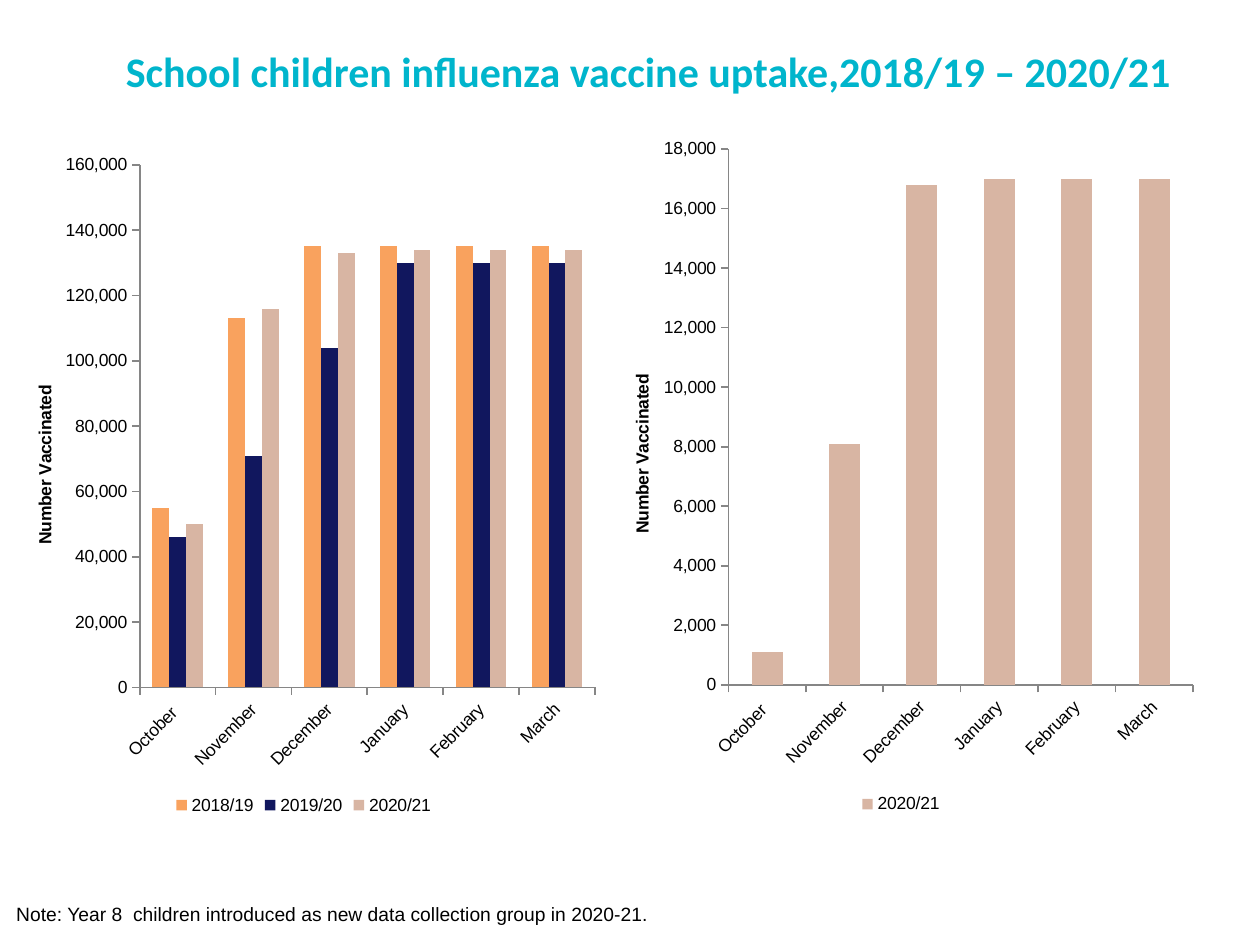
"""Build a slide comparing school influenza vaccine uptake in two column charts."""
from lxml import etree
from pptx import Presentation
from pptx import util as u
from pptx.chart.data import CategoryChartData
from pptx.dml.color import RGBColor
from pptx.enum import chart as c
from pptx.enum import text as t
from pptx.oxml import parse_xml
from pptx.oxml.ns import nsdecls, qn

TEAL = RGBColor(0x00, 0xB5, 0xCC)
ORANGE = RGBColor(0xF9, 0xA2, 0x5E)
NAVY = RGBColor(0x11, 0x17, 0x5E)
BEIGE = RGBColor(0xD8, 0xB5, 0xA3)
GREY = RGBColor(0x86, 0x86, 0x86)
BLACK = RGBColor(0, 0, 0)

MONTHS = ["October ", "November", "December", "January", "February", "March"]
CHARTS = [
    {"frame": (0, 80.6, 347, 388), "plot": (0.23, 0.035, 0.75, 0.77), "top": 160000, "step": 20000,
     "series": [("2018/19", ORANGE, (55000, 113000, 135000, 135000, 135000, 135000)),
                ("2019/20", NAVY, (46000, 71000, 104000, 130000, 130000, 130000)),
                ("2020/21", BEIGE, (50000, 116000, 133000, 134000, 134000, 134000))]},
    {"frame": (341.3, 71.3, 347, 396.7), "plot": (0.216, 0.035, 0.765, 0.772), "top": 18000, "step": 2000,
     "series": [("2020/21", BEIGE, (1100, 8100, 16800, 17000, 17000, 17000))]},
]


def write(frame, words, size=10, font="Arial", color=BLACK, bold=False, align=None):
    paragraph = frame.paragraphs[0]
    paragraph.alignment = align
    run = paragraph.add_run()
    run.text = words
    run.font.size = u.Pt(size)
    run.font.name = font
    run.font.bold = bold
    run.font.color.rgb = color


def place(element, index, target, **fractions):
    for old in element.findall(qn("c:layout")):
        element.remove(old)
    modes = "".join(f'<c:{axis}Mode val="edge"/>' for axis in "xy")
    sizes = "".join(f'<c:{key} val="{value}"/>' for key, value in fractions.items())
    element.insert(index, parse_xml(
        f'<c:layout {nsdecls("c")}><c:manualLayout>{target}{modes}{sizes}</c:manualLayout></c:layout>'))


presentation = Presentation()
presentation.slide_width = u.Pt(720)
presentation.slide_height = u.Pt(540)
slide = presentation.slides.add_slide(presentation.slide_layouts[5])

title = slide.shapes.title
title.left, title.top, title.width, title.height = u.Pt(52.5), u.Pt(0), u.Pt(636), u.Pt(80.6)
title.text_frame.word_wrap = False
title.text_frame.vertical_anchor = t.MSO_ANCHOR.MIDDLE
write(title.text_frame, "School children influenza vaccine uptake,2018/19 – 2020/21",
      size=24, font="Calibri", color=TEAL, bold=True, align=t.PP_ALIGN.CENTER)

for settings in CHARTS:
    data = CategoryChartData(number_format="#,##0")
    data.categories = MONTHS
    for name, color, values in settings["series"]:
        data.add_series(name, values)
    chart = slide.shapes.add_chart(c.XL_CHART_TYPE.COLUMN_CLUSTERED,
                                   *map(u.Pt, settings["frame"]), data).chart
    chart.has_title = False
    chart.font.size = u.Pt(10)
    chart.font.name = "Arial"
    chart.font.color.rgb = BLACK
    chart.has_legend = True
    chart.legend.position = c.XL_LEGEND_POSITION.BOTTOM
    chart.legend.include_in_layout = False

    plot = chart.plots[0]
    plot.gap_width = 150
    plot.overlap = 0
    plot.vary_by_categories = False
    for series, (name, color, values) in zip(plot.series, settings["series"]):
        series.format.fill.solid()
        series.format.fill.fore_color.rgb = color

    for axis in (chart.category_axis, chart.value_axis):
        axis.has_major_gridlines = False
        axis.major_tick_mark = c.XL_TICK_MARK.OUTSIDE
        axis.minor_tick_mark = c.XL_TICK_MARK.NONE
        axis.format.line.color.rgb = GREY
        axis.format.line.width = u.Pt(1)
        axis.tick_labels.font.size = u.Pt(10)
    chart.category_axis._element.find(qn("c:txPr")).find(qn("a:bodyPr")).set("rot", "-2700000")

    value_axis = chart.value_axis
    value_axis.minimum_scale = 0
    value_axis.maximum_scale = settings["top"]
    value_axis.major_unit = settings["step"]
    value_axis.tick_labels.number_format = "#,##0"
    value_axis.tick_labels.number_format_is_linked = False
    heading = value_axis.axis_title
    write(heading.text_frame, "Number Vaccinated", bold=True)
    body = heading.text_frame._txBody.find(qn("a:bodyPr"))
    body.set("rot", "-5400000")
    body.set("vert", "horz")
    place(heading._element, 1, "", x=0.05, y=0.355)
    plot_area = chart._chartSpace.find(qn("c:chart")).find(qn("c:plotArea"))
    place(plot_area, 0, '<c:layoutTarget val="inner"/>', **dict(zip("xywh", settings["plot"])))

table = slide.shapes.add_table(1, 1, u.Pt(8.6), u.Pt(514), u.Pt(504.7), u.Pt(15)).table
table.first_row = False
table.horz_banding = False
note = table.cell(0, 0)
note.fill.background()
note.vertical_anchor = t.MSO_ANCHOR.BOTTOM
note.margin_left = note.margin_right = note.margin_top = u.Pt(0.7)
note.margin_bottom = u.Pt(0)
write(note.text_frame, "Note: Year 8  children introduced as new data collection group in 2020-21.", size=11)
properties = note._tc.get_or_add_tcPr()
for index, side in enumerate(("lnL", "lnR", "lnT", "lnB")):
    border = etree.Element(qn(f"a:{side}"), w=str(u.Pt(1)))
    fill = etree.SubElement(border, qn("a:solidFill"))
    etree.SubElement(fill, qn("a:srgbClr"), val="FFFFFF")
    properties.insert(index, border)

presentation.save("out.pptx")
